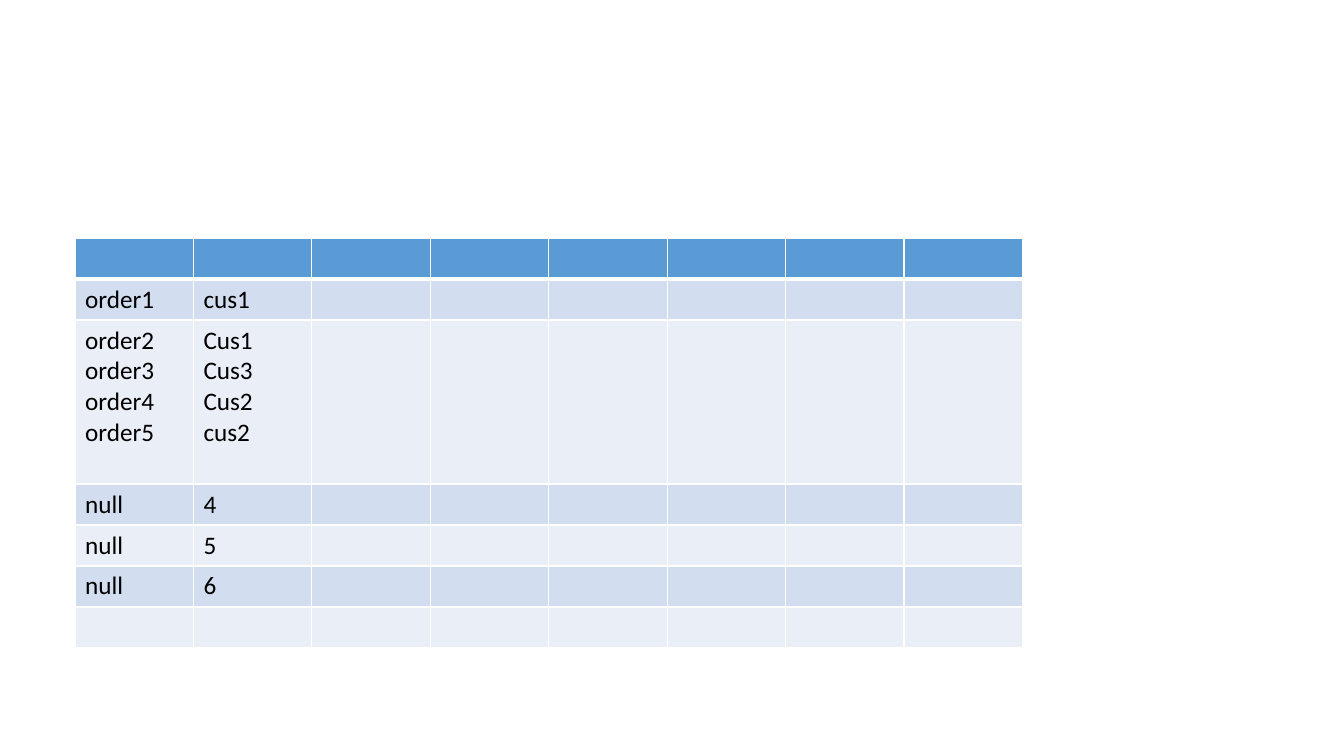
from lxml import etree
from pptx import Presentation
from pptx import util as u
from pptx.dml.color import RGBColor
from pptx.oxml.ns import qn

# Content: one tuple per table row, one line per paragraph
ROWS = [
    (),
    ("order1", "cus1"),
    ("order2\norder3\norder4\norder5", "Cus1\nCus3\nCus2\ncus2"),
    ("null", "4"),
    ("null", "5"),
    ("null", "6"),
    (),
]
COLS = 8
LEFT, TOP, COL_W = 75, 238, 118
ROW_H, TALL_H, TALL_ROW = 41, 164, 2
HEADER, BANDS, WHITE, BLACK = "5B9BD5", ("EAEFF7", "D2DEEF"), "FFFFFF", "000000"


def px(n):
    return u.Emu(round(n * 914400 / 100.8))


def rgb(value):
    return RGBColor.from_string(value)


def set_borders(cell, bottom_pt):
    tc_pr = cell._tc.get_or_add_tcPr()
    for side, pt in (("L", 1), ("R", 1), ("T", 1), ("B", bottom_pt)):
        ln = etree.SubElement(tc_pr, qn("a:ln" + side), w=str(u.Pt(pt)))
        fill = etree.SubElement(ln, qn("a:solidFill"))
        etree.SubElement(fill, qn("a:srgbClr"), val=WHITE)


prs = Presentation()
prs.slide_width, prs.slide_height = px(1344), px(756)
s = prs.slides.add_slide(prs.slide_layouts[6])

# Table grid
heights = [TALL_H if i == TALL_ROW else ROW_H for i in range(len(ROWS))]
table = s.shapes.add_table(len(ROWS), COLS, px(LEFT), px(TOP),
                           px(COLS * COL_W), px(sum(heights))).table
for col in table.columns:
    col.width = u.Inches(1.175)
for row, height in zip(table.rows, heights):
    row.height = px(height)

# Cells: borders, fill, then text
for i, values in enumerate(ROWS):
    for j in range(COLS):
        cell = table.cell(i, j)
        set_borders(cell, 3 if i == 0 else 1)
        cell.fill.solid()
        cell.fill.fore_color.rgb = rgb(BANDS[i % 2] if i else HEADER)
        if j < len(values):
            cell.text_frame.text = values[j]
        for p in cell.text_frame.paragraphs:
            p.font.size = u.Pt(18)
            for r in p.runs:
                r.font.size = u.Pt(18)
                r.font.name = "Calibri"
                r.font.color.rgb = rgb(BLACK)

prs.save("out.pptx")
